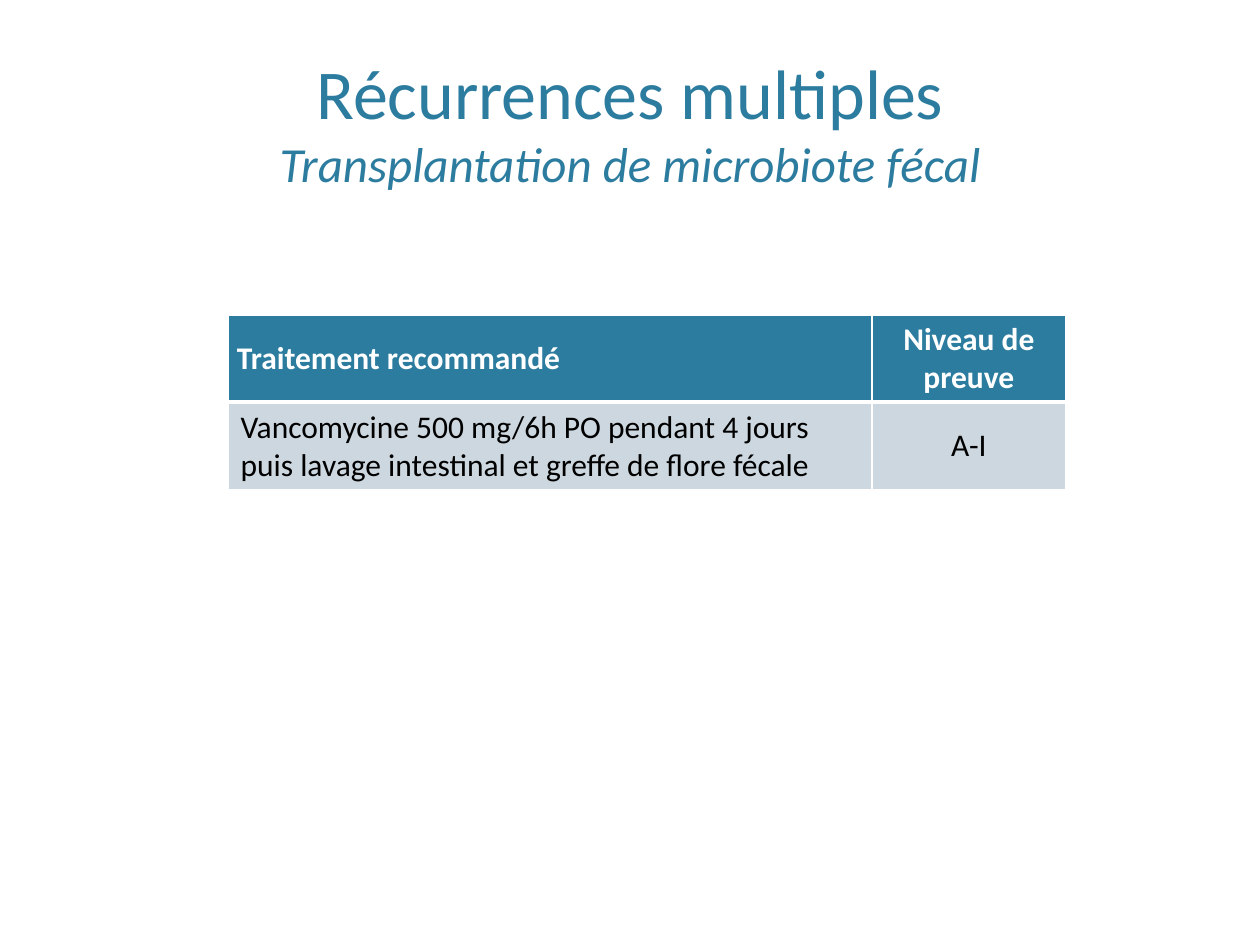
from lxml import etree
from pptx import Presentation
from pptx import util as u
from pptx.dml.color import RGBColor
from pptx.enum import text
from pptx.oxml import ns

TEAL, PALE, WHITE, BLACK = "2C7C9F", "CDD7DF", "FFFFFF", "000000"
LEFT, CENTER = text.PP_ALIGN.LEFT, text.PP_ALIGN.CENTER


def color(value):
    return RGBColor.from_string(value)


class SlideBuilder:
    font = "Calibri"

    def __init__(self, page):
        self.page = page

    def add_span(self, para, words, size, fill, bold=False, italic=False):
        span = para.add_run()
        span.text = words
        span.font.name = self.font
        span.font.size = u.Pt(size)
        span.font.bold = bold
        span.font.italic = italic
        span.font.color.rgb = color(fill)

    def add_title(self, left, top, width, height, title, subtitle):
        box = self.page.shapes.add_textbox(
            u.Inches(left), u.Inches(top), u.Inches(width), u.Inches(height))
        frame = box.text_frame
        frame.word_wrap = True
        frame.vertical_anchor = text.MSO_ANCHOR.BOTTOM
        para = frame.paragraphs[0]
        para.alignment = CENTER
        self.add_span(para, title, 40, TEAL)
        para.add_line_break()
        self.add_span(para, subtitle, 28, TEAL, italic=True)

    def set_borders(self, cell, widths):
        properties = cell._tc.get_or_add_tcPr()
        for index, (side, width) in enumerate(widths.items()):
            line = etree.Element(ns.qn(f"a:ln{side}"), w=str(u.Pt(width)))
            fill = etree.SubElement(line, ns.qn("a:solidFill"))
            etree.SubElement(fill, ns.qn("a:srgbClr"), val=WHITE)
            properties.insert(index, line)

    def add_table(self, left, top, columns, row_height, rows):
        frame = self.page.shapes.add_table(
            len(rows), len(columns), u.Inches(left), u.Inches(top),
            u.Inches(sum(columns)), u.Inches(row_height * len(rows)))
        table = frame.table
        for column, width in zip(table.columns, columns):
            column.width = u.Inches(width)
        for r, row in enumerate(rows):
            header = r == 0
            for c, words in enumerate(row):
                cell = table.cell(r, c)
                cell.fill.solid()
                cell.fill.fore_color.rgb = color(TEAL if header else PALE)
                cell.vertical_anchor = text.MSO_ANCHOR.MIDDLE
                cell.margin_left = cell.margin_right = u.Inches(0.07 if header else 0.1)
                cell.margin_top = cell.margin_bottom = u.Inches(0.04 if header else 0.05)
                para = cell.text_frame.paragraphs[0]
                para.alignment = CENTER if c else LEFT
                self.add_span(para, words, 18, WHITE if header else BLACK, bold=header)
                # A thick rule separates the header from the body
                self.set_borders(cell, {"L": 1, "R": 1, "T": 1 if header else 3,
                                        "B": 3 if header else 1})


def main():
    deck = Presentation()
    deck.slide_width, deck.slide_height = u.Inches(10), u.Inches(7.5)
    builder = SlideBuilder(deck.slides.add_slide(deck.slide_layouts[6]))

    # Title and subtitle
    builder.add_title(0.6, 0.12, 8.8, 1.46,
                      "Récurrences multiples", "Transplantation de microbiote fécal")

    # Recommended treatment
    builder.add_table(1.81, 2.5, [5.11, 1.54], 0.69, [
        ["Traitement recommandé", "Niveau de preuve"],
        ["Vancomycine 500 mg/6h PO pendant 4 jours puis lavage intestinal "
         "et greffe de flore fécale", "A-I"],
    ])

    deck.save("out.pptx")


if __name__ == "__main__":
    main()
